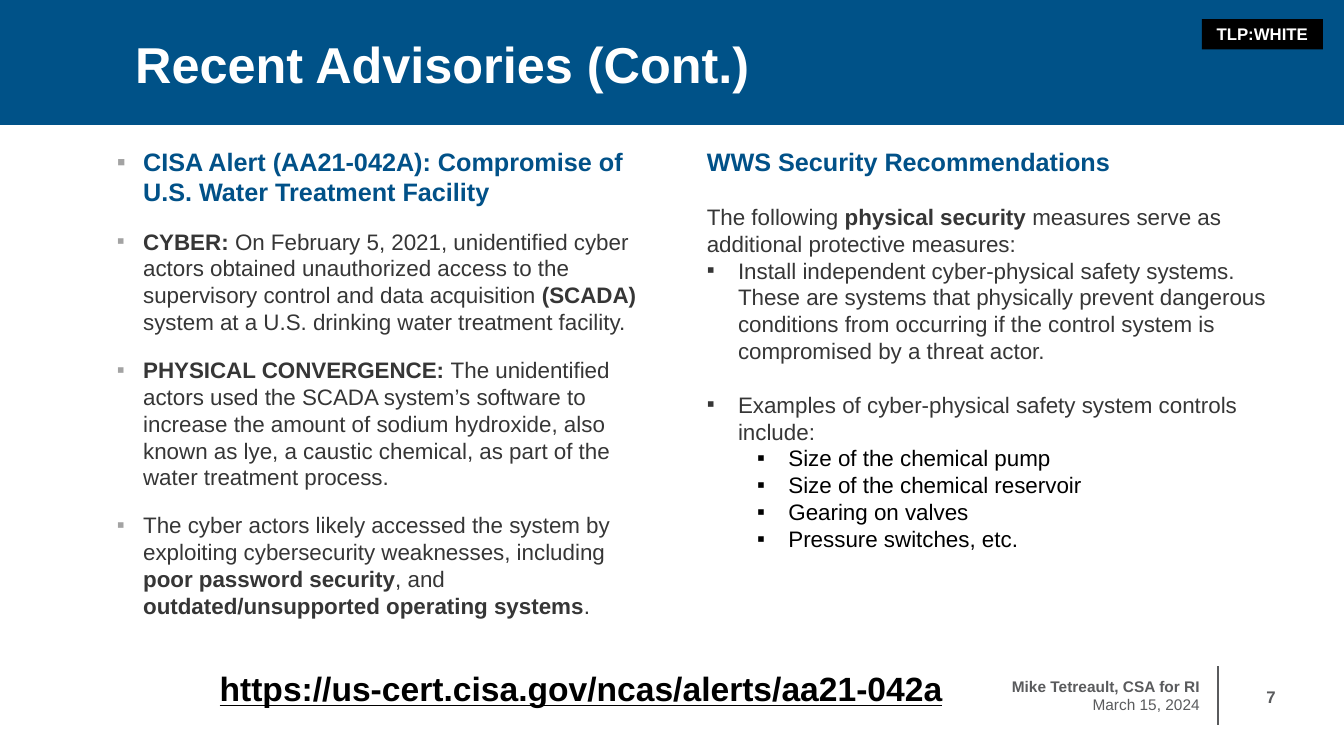
from dataclasses import dataclass

from lxml.etree import SubElement as Sub
from pptx import Presentation
from pptx.dml.color import RGBColor as Rgb
from pptx.enum.shapes import MSO_CONNECTOR as Conn, MSO_SHAPE as Kind
from pptx.enum.text import MSO_ANCHOR as Anchor, MSO_AUTO_SIZE as Fit, PP_ALIGN as Align
from pptx.oxml.ns import qn
from pptx.util import Inches, Pt

HUE = {
    "band": "005288", "head": "015188", "body": "363636", "mark": "A3A3A3",
    "foot": "5A5B5D", "black": "000000", "white": "FFFFFF",
}


@dataclass
class Para:
    text: str  # **double stars** switch bold on and off
    size: float = 16
    hue: str = "body"
    left: float = 0
    hang: float = 0  # a hanging indent brings a bullet
    mark: str = ""
    level: int = 0
    before: float = 0
    after: float = 0
    align: Align = Align.LEFT
    line: bool = False


def color(name: str) -> Rgb:
    return Rgb.from_string(HUE[name])


def indent(para, item: Para) -> None:
    props = para._p.get_or_add_pPr()
    props.set("marL", str(Inches(item.left)))
    props.set("indent", str(-Inches(item.hang)))
    if not item.hang:
        Sub(props, qn("a:buNone"))
        return
    if item.mark:
        tint = Sub(props, qn("a:buClr"))
        Sub(tint, qn("a:srgbClr"), val=HUE[item.mark])
    Sub(props, qn("a:buFont"), typeface="Arial")
    Sub(props, qn("a:buChar"), char="▪")


def write(shape, items: list[Para], anchor=Anchor.TOP) -> None:
    frame = shape.text_frame
    frame.word_wrap = True
    frame.auto_size = Fit.NONE
    frame.vertical_anchor = anchor
    for num, item in enumerate(items):
        para = frame.add_paragraph() if num else frame.paragraphs[0]
        para.level = item.level
        para.alignment = item.align
        indent(para, item)
        para.space_before = Pt(item.before)
        para.space_after = Pt(item.after)
        for part, words in enumerate(item.text.split("**")):
            if not words:
                continue
            run = para.add_run()
            run.text = words
            font = run.font
            font.name, font.size = "Arial", Pt(item.size)
            font.bold = part % 2 == 1
            font.underline = item.line
            font.color.rgb = color(item.hue)


def place(shape, left: float, top: float, width: float, height: float):
    shape.left, shape.top = Inches(left), Inches(top)
    shape.width, shape.height = Inches(width), Inches(height)
    return shape


def label(slide, box: tuple, text: str, anchor=Anchor.TOP, **form) -> None:
    shape = slide.shapes.add_textbox(*map(Inches, box))
    write(shape, [Para(row, **form) for row in text.split("\n")], anchor)


def fact(text: str, **form) -> Para:
    form = {"before": 11, "after": 4} | form
    return Para(text, left=0.26, hang=0.26, mark="mark", **form)


def point(text: str, **form) -> Para:
    return Para(text, left=0.31, hang=0.31, **form)


def sub(text: str) -> Para:
    return Para(text, left=0.81, hang=0.31, level=1, hue="black")


ALERT = [
    fact("**CISA Alert (AA21-042A): Compromise of U.S. Water Treatment Facility**",
         size=18, hue="head", before=0),
    fact("**CYBER: **On February 5, 2021, unidentified cyber actors obtained "
         "unauthorized access to the supervisory control and data acquisition "
         "**(SCADA) **system at a U.S. drinking water treatment facility."),
    fact("**PHYSICAL CONVERGENCE: **The unidentified actors used the SCADA system’s "
         "software to increase the amount of sodium hydroxide, also known as lye, "
         "a caustic chemical, as part of the water treatment process."),
    fact("The cyber actors likely accessed the system by exploiting cybersecurity "
         "weaknesses, including **poor password security**, and "
         "**outdated/unsupported operating systems**."),
]
ADVICE = [
    Para("**WWS Security Recommendations**", size=18, hue="head"),
    Para("The following **physical security **measures serve as additional "
         "protective measures:", before=19),
    point("Install independent cyber-physical safety systems. These are systems that "
          "physically prevent dangerous conditions from occurring if the control "
          "system is compromised by a threat actor."),
    point("Examples of cyber-physical safety system controls include:", before=19),
    *map(sub, ["Size of the chemical pump", "Size of the chemical reservoir",
               "Gearing on valves", "Pressure switches, etc."]),
]


def main() -> None:
    deck = Presentation()
    deck.slide_width, deck.slide_height = Inches(13.33), Inches(7.5)
    slide = deck.slides.add_slide(deck.slide_layouts[3])
    title, left, right = slide.placeholders

    # Title band
    place(title, 0, -0.01, 13.33, 1.25)
    title.fill.solid()
    title.fill.fore_color.rgb = color("band")
    write(title, [Para("**Recent Advisories (Cont.)**", size=36, hue="white")])
    title.text_frame.margin_left = Inches(1.34)
    title.text_frame.margin_top = Inches(0.34)

    # Two columns
    write(place(left, 1.06, 1.4, 5.42, 4.7), ALERT)
    write(place(right, 6.91, 1.4, 5.84, 4.17), ADVICE)

    # Sharing tag
    tag = slide.shapes.add_shape(Kind.RECTANGLE, *map(Inches, (11.92, 0.19, 1.2, 0.3)))
    tag.shadow.inherit = False
    tag.fill.solid()
    tag.fill.fore_color.rgb = color("black")
    tag.line.fill.background()
    write(tag, [Para("**TLP:WHITE**", size=12, hue="white", align=Align.CENTER)],
          Anchor.MIDDLE)

    # Web address and footer
    label(slide, (2.08, 6.58, 7.5, 0.5),
          "**https://us-cert.cisa.gov/ncas/alerts/aa21-042a**",
          size=24, hue="black", line=True)
    label(slide, (9, 6.61, 3, 0.58), "**Mike Tetreault, CSA for RI**\nMarch 15, 2024",
          Anchor.MIDDLE, size=11, hue="foot", align=Align.RIGHT)
    label(slide, (12.17, 6.76, 0.58, 0.3), "**7**",
          Anchor.MIDDLE, size=12, hue="foot", align=Align.RIGHT)
    rule = slide.shapes.add_connector(
        Conn.STRAIGHT, *map(Inches, (12.08, 6.61, 12.08, 7.19)))
    rule.line.color.rgb = color("foot")
    rule.line.width = Pt(1)
    Sub(rule._element.spPr, qn("a:effectLst"))

    deck.save("out.pptx")


if __name__ == "__main__":
    main()
